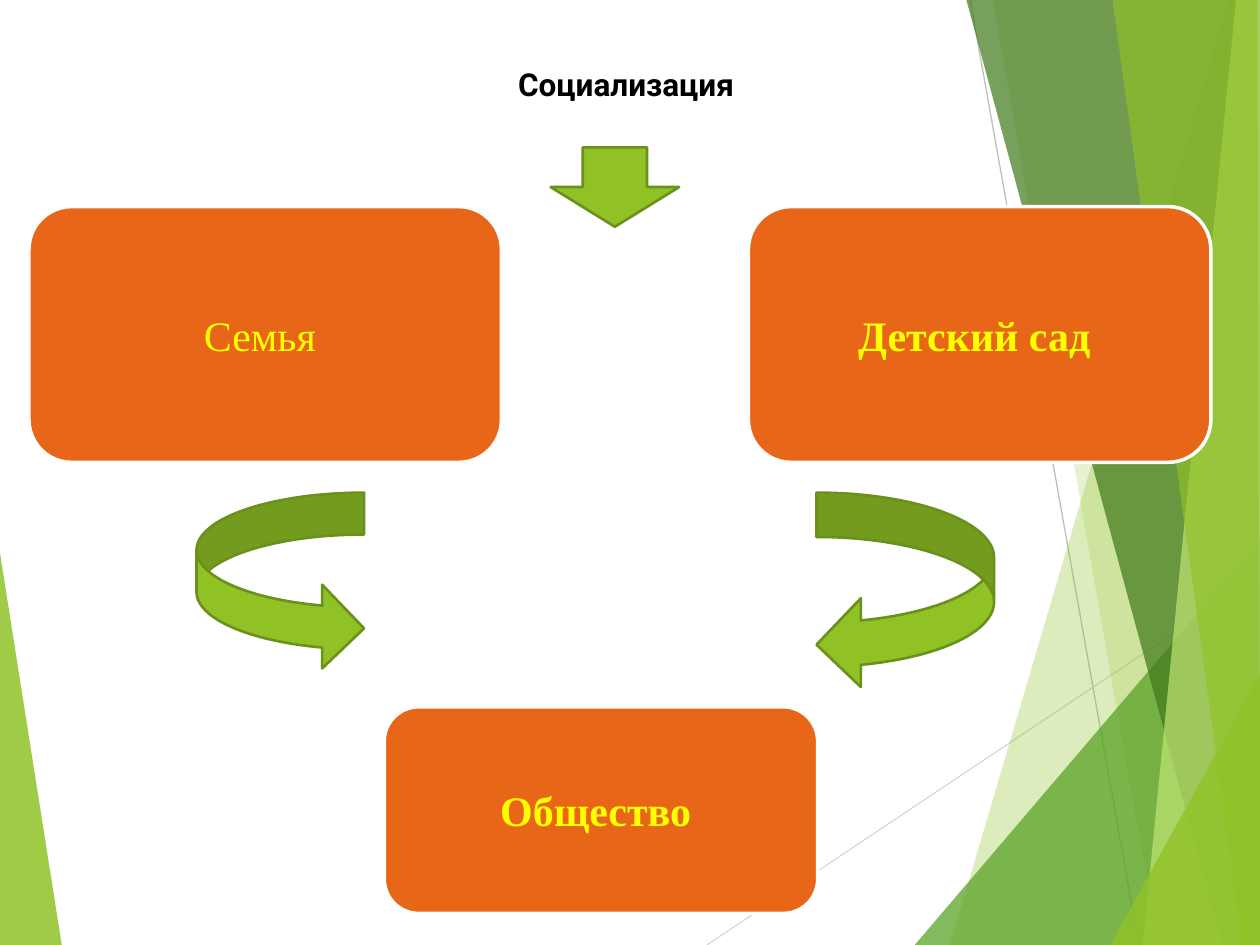
from lxml.etree import SubElement
from pptx import Presentation
from pptx.dml.color import RGBColor
from pptx.enum.shapes import MSO_CONNECTOR, MSO_SHAPE as Preset
from pptx.enum.text import MSO_ANCHOR, PP_ALIGN
from pptx.oxml.ns import qn
from pptx.util import Inches, Pt

COLORS = {
    "lime": "90C226", "green": "54A021", "forest": "3F7819", "pale": "C0E474",
    "arrow_edge": "6B901C", "orange": "E76618", "white": "FFFFFF",
    "yellow": "FFFF00", "black": "000000", "letter_edge": "8BBF1D",
    "light_grey": "D9D9D9", "grey": "BFBFBF",
}

LEFT_FACET = ("lime", 85, [(0, 4.39), (0.49, 7.5), (0, 7.5)])
RIGHT_FACETS = [
    ("lime", 30, [(9.75, 0), (7.54, 7.5), (10, 7.5), (10, 0)]),
    ("lime", 20, [(7.88, 0), (9.19, 7.5), (10, 7.5), (10, 0)]),
    ("green", 72, [(7.26, 7.5), (10, 4.29), (10, 7.5)]),
    ("forest", 70, [(7.67, 0), (9.7, 7.5), (10, 7.5), (10, 0)]),
    ("pale", 70, [(9.81, 0), (9.07, 7.5), (10, 7.5), (10, 0)]),
    ("lime", 65, [(8.83, 0), (9.86, 7.5), (10, 7.5), (9.98, 0)]),
    ("lime", 80, [(8.81, 7.5), (10, 5.35), (10, 7.5)]),
]
RAYS = [("light_grey", (5.61, 7.5), (10, 4.57)), ("grey", (7.7, 0), (9.04, 7.5))]
CARDS = [
    ("Семья ", False, (0.23, 1.64, 3.75, 2.03)),
    ("Детский сад ", True, (5.94, 1.64, 3.67, 2.03)),
    ("Общество ", True, (3.05, 5.61, 3.44, 1.64)),
]
ARROWS = [
    (Preset.DOWN_ARROW, (4.37, 1.17, 1.02, 0.63)),
    (Preset.CURVED_LEFT_ARROW, (6.48, 3.91, 1.41, 1.56)),
    (Preset.CURVED_RIGHT_ARROW, (1.56, 3.91, 1.33, 1.41)),
]


def rgb(name):
    """Return the named colour."""
    return RGBColor.from_string(COLORS[name])


def inches(values):
    """Convert a sequence of numbers to lengths."""
    return [Inches(value) for value in values]


def add_facet(slide, color, opacity, corners):
    """Draw one translucent polygon of the backdrop."""
    points = [inches(corner) for corner in corners]
    builder = slide.shapes.build_freeform(*points[0], scale=1.0)
    builder.add_line_segments(points[1:], close=True)
    facet = builder.convert_to_shape()
    facet.shadow.inherit = False
    facet.fill.solid()
    facet.fill.fore_color.rgb = rgb(color)
    facet.line.fill.background()
    fill_color = facet.fill._xPr.find(qn("a:solidFill"))[0]
    SubElement(fill_color, qn("a:alpha"), val=str(opacity * 1000))


def add_ray(slide, color, start, end):
    """Draw one thin line of the backdrop."""
    ray = slide.shapes.add_connector(
        MSO_CONNECTOR.STRAIGHT, *inches(start), *inches(end))
    ray.line.color.rgb = rgb(color)
    ray.line.width = Pt(0.75)
    SubElement(ray._element.spPr, qn("a:effectLst"))


def add_preset(slide, preset, box, fill, edge, width):
    """Draw a filled and outlined preset shape."""
    shape = slide.shapes.add_shape(preset, *inches(box))
    shape.shadow.inherit = False
    shape.fill.solid()
    shape.fill.fore_color.rgb = rgb(fill)
    shape.line.color.rgb = rgb(edge)
    shape.line.width = Pt(width)
    return shape


def add_words(paragraph, words, font, size, color, bold):
    """Add a centred run and return it."""
    paragraph.alignment = PP_ALIGN.CENTER
    run = paragraph.add_run()
    run.text = words
    run.font.name = font
    run.font.size = Pt(size)
    run.font.bold = bold
    run.font.color.rgb = rgb(color)
    return run


def outline_letters(run, color, width):
    """Give the letters of a run a thin outline."""
    properties = run.font._element
    edge = SubElement(properties, qn("a:ln"), w=str(Pt(width)))
    fill = SubElement(edge, qn("a:solidFill"))
    SubElement(fill, qn("a:srgbClr"), val=COLORS[color])
    properties.insert(0, edge)


def add_card(slide, words, bold, box):
    """Draw a rounded card with its word."""
    card = add_preset(slide, Preset.ROUNDED_RECTANGLE, box, "orange", "white", 2)
    card.text_frame.vertical_anchor = MSO_ANCHOR.MIDDLE
    run = add_words(card.text_frame.paragraphs[0], words,
                    "Times New Roman", 24, "yellow", bold)
    if not bold:
        outline_letters(run, "letter_edge", 0.83)


def add_heading(slide, words, box):
    """Add the heading with its hanging indent."""
    frame = slide.shapes.add_textbox(*inches(box)).text_frame
    frame.word_wrap = True
    paragraph = frame.paragraphs[0]
    paragraph.space_before = Pt(10)
    add_words(paragraph, words, "Roboto", 18, "black", True)
    properties = paragraph._p.get_or_add_pPr()
    properties.set("marL", str(Inches(0.38)))
    properties.set("indent", str(Inches(-0.38)))


def main():
    """Build the slide and save it."""
    deck = Presentation()
    deck.slide_width, deck.slide_height = Inches(10), Inches(7.5)
    slide = deck.slides.add_slide(deck.slide_layouts[6])
    add_facet(slide, *LEFT_FACET)
    for ray in RAYS:
        add_ray(slide, *ray)
    for facet in RIGHT_FACETS:
        add_facet(slide, *facet)
    add_heading(slide, "Социализация ", (0.39, 0.47, 9.22, 0.73))
    for card in CARDS:
        add_card(slide, *card)
    for preset, box in ARROWS:
        add_preset(slide, preset, box, "lime", "arrow_edge", 1.5)
    deck.save("out.pptx")


if __name__ == "__main__":
    main()
